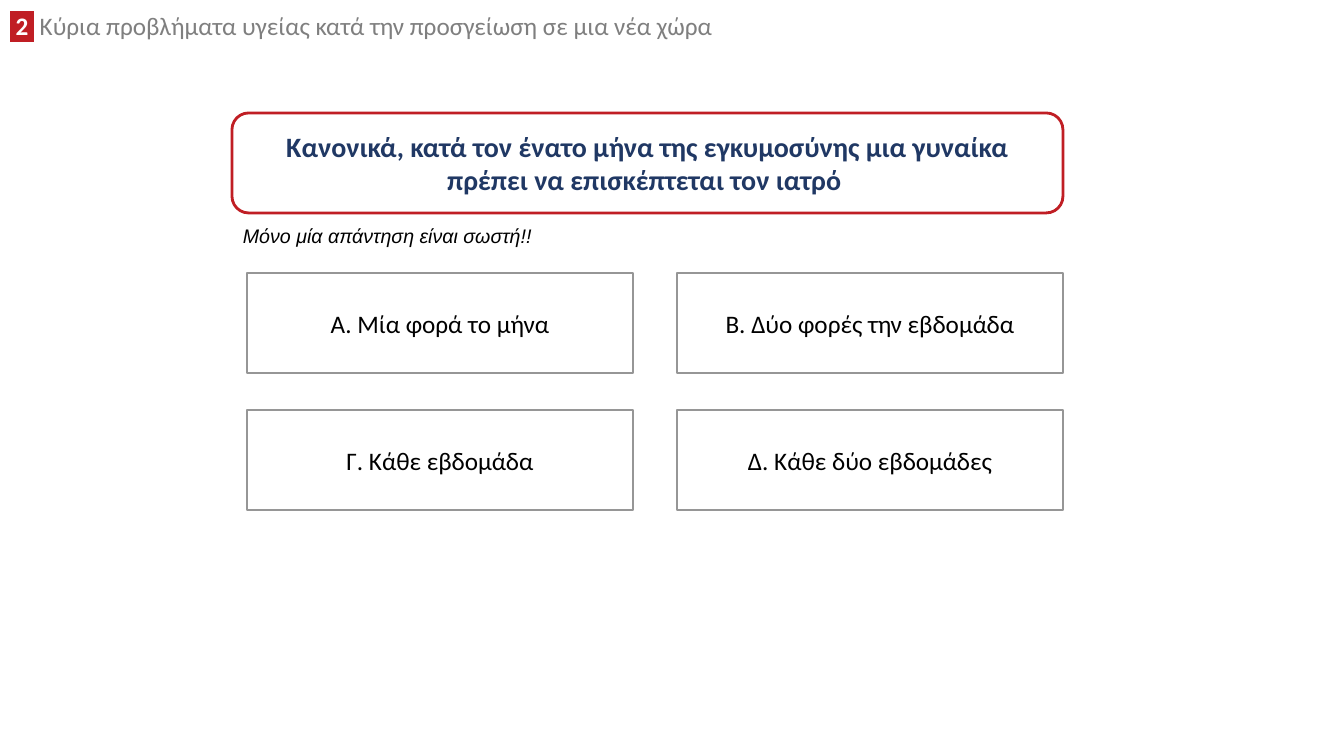
from lxml import etree
from pptx import Presentation
from pptx import util as u
from pptx.dml.color import RGBColor
from pptx.enum import shapes, text
from pptx.oxml.ns import qn

PX = 914400 / 100.8
RED, GREY, WHITE, BLACK = "C01E24", "969696", "FFFFFF", "000000"
ANSWERS = ["Α. Μία φορά το μήνα", "Β. Δύο φορές την εβδομάδα",
           "Γ. Κάθε εβδομάδα", "Δ. Κάθε δύο εβδομάδες"]


def px(length):
    return u.Emu(round(length * PX))


def color(value):
    return RGBColor.from_string(value)


def style(span, size, ink, face="Calibri", bold=False, italic=False):
    font = span.font
    font.name, font.size, font.bold, font.italic = face, u.Pt(size), bold, italic
    font.color.rgb = color(ink)


def highlight(span, value):
    fill = span.font._element.find(qn("a:solidFill"))
    mark = etree.Element(qn("a:highlight"))
    etree.SubElement(mark, qn("a:srgbClr")).set("val", value)
    fill.addnext(mark)


def add_heading(page, left, top, width, height):
    """Section number on a red mark, followed by the section title."""
    frame = page.shapes.add_textbox(px(left), px(top), px(width), px(height)).text_frame
    frame.word_wrap = True
    para = frame.paragraphs[0]
    para.line_spacing = 0.8
    number, title = para.add_run(), para.add_run()
    number.text = " 2 "
    title.text = " Κύρια προβλήματα υγείας κατά την προσγείωση σε μια νέα χώρα"
    style(number, 18, WHITE, bold=True)
    style(title, 18, "7F7F7F")
    highlight(number, RED)


def add_card(page, kind, left, top, width, height, words, border, size, ink, bold=False):
    """White outlined shape with centred text."""
    card = page.shapes.add_shape(kind, px(left), px(top), px(width), px(height))
    card.shadow.inherit = False
    card.fill.solid()
    card.fill.fore_color.rgb = color(WHITE)
    card.line.color.rgb = color(border)
    card.line.width = u.Pt(2)
    frame = card.text_frame
    frame.word_wrap = True
    frame.vertical_anchor = text.MSO_ANCHOR.MIDDLE
    frame.text = words
    para = frame.paragraphs[0]
    para.alignment = text.PP_ALIGN.CENTER
    style(para.runs[0], size, ink, bold=bold)


def add_question(page, left, top, width, height):
    add_card(page, shapes.MSO_SHAPE.ROUNDED_RECTANGLE, left, top, width, height,
             "Κανονικά, κατά τον ένατο μήνα της εγκυμοσύνης μια γυναίκα "
             "πρέπει να επισκέπτεται τον ιατρό ", RED, 20, "203864", bold=True)


def add_hint(page, left, top, width, height):
    frame = page.shapes.add_textbox(px(left), px(top), px(width), px(height)).text_frame
    frame.word_wrap = False
    frame.text = "Μόνο μία απάντηση είναι σωστή!!"
    style(frame.paragraphs[0].runs[0], 14, BLACK, face="Arial", italic=True)


def add_answers(page, left, top, width, height):
    """Two by two grid of answers filling the box."""
    card_width, card_height = 386, 100
    for index, answer in enumerate(ANSWERS):
        row, column = divmod(index, 2)
        add_card(page, shapes.MSO_SHAPE.RECTANGLE,
                 left + column * (width - card_width), top + row * (height - card_height),
                 card_width, card_height, answer, GREY, 18, BLACK)


def main():
    deck = Presentation()
    deck.slide_width, deck.slide_height = px(1344), px(756)
    page = deck.slides.add_slide(deck.slide_layouts[6])
    add_heading(page, 0, 11, 838, 35)
    add_question(page, 232, 113, 831, 100)
    add_hint(page, 233, 219, 311, 34)
    add_answers(page, 247, 273, 816, 237)
    deck.save("out.pptx")


if __name__ == "__main__":
    main()
